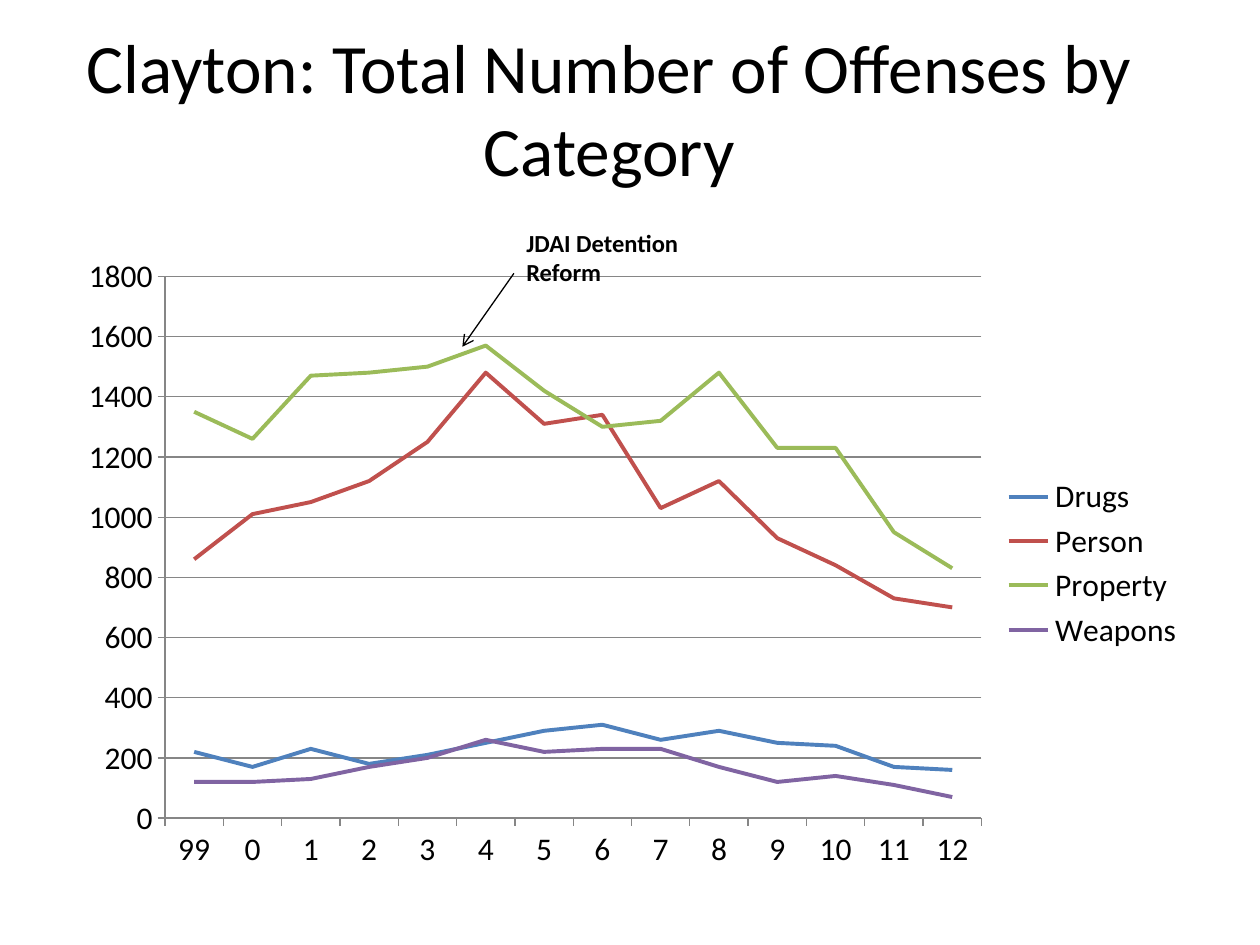
from lxml import etree
from pptx import Presentation
from pptx.chart.data import CategoryChartData
from pptx.dml.color import RGBColor
from pptx.enum.chart import XL_CHART_TYPE, XL_LEGEND_POSITION, XL_TICK_MARK
from pptx.enum.shapes import MSO_CONNECTOR
from pptx.enum.text import MSO_ANCHOR, PP_ALIGN
from pptx.oxml import parse_xml
from pptx.oxml.ns import nsdecls, qn
from pptx.util import Cm, Pt

LINE_CHART = XL_CHART_TYPE.LINE
LEGEND_RIGHT = XL_LEGEND_POSITION.RIGHT
TICK_OUT, TICK_NONE = XL_TICK_MARK.OUTSIDE, XL_TICK_MARK.NONE
STRAIGHT = MSO_CONNECTOR.STRAIGHT
MIDDLE, CENTER = MSO_ANCHOR.MIDDLE, PP_ALIGN.CENTER

# Content
TITLE = "Clayton: Total Number of Offenses by Category"
NOTE = "JDAI Detention Reform"
YEARS = ["99", *map(str, range(13))]
OFFENSES = {
    "Drugs": [220, 170, 230, 180, 210, 250, 290, 310, 260, 290, 250, 240, 170, 160],
    "Person": [860, 1010, 1050, 1120, 1250, 1480, 1310, 1340, 1030, 1120, 930, 840, 730, 700],
    "Property": [1350, 1260, 1470, 1480, 1500, 1570, 1420, 1300, 1320, 1480, 1230, 1230, 950, 830],
    "Weapons": [120, 120, 130, 170, 200, 260, 220, 230, 230, 170, 120, 140, 110, 70],
}
COLORS = {
    "text": "000000",
    "axis": "868686",
    "Drugs": "4F81BD",
    "Person": "C0504D",
    "Property": "9BBB59",
    "Weapons": "8064A2",
}

# Places in centimetres: left, top, width, height (arrow: from, to)
TITLE_AT = (0.43, 0.43, 23.7, 3.48)
CHART_AT = (1.27, 4.93, 22.86, 12.85)
NOTE_AT = (10.36, 4.47, 3.61, 2.06)
ARROW_AT = (10.36, 5.51, 9.32, 6.99)
PLOT_SHARE = {"x": 0.09, "y": 0.05, "w": 0.72, "h": 0.85}


def color(name):
    return RGBColor.from_string(COLORS[name])


def set_font(font, **formats):
    for name, value in {"name": "Calibri", **formats}.items():
        setattr(font, name, value)
    font.color.rgb = color("text")


def set_line(line, name, width):
    line.color.rgb = color(name)
    line.width = Pt(width)


def add_title(page):
    box = page.shapes.title
    box.left, box.top, box.width, box.height = map(Cm, TITLE_AT)
    box.text_frame.text = TITLE
    box.text_frame.vertical_anchor = MIDDLE
    para = box.text_frame.paragraphs[0]
    para.alignment = CENTER
    set_font(para.runs[0].font, size=Pt(39.6))


def add_offense_chart(page):
    data = CategoryChartData()
    data.categories = YEARS
    for name, values in OFFENSES.items():
        data.add_series(name, values)
    chart = page.shapes.add_chart(LINE_CHART, *map(Cm, CHART_AT), data).chart
    chart.has_title = False
    set_font(chart.font, size=Pt(18))
    chart.has_legend = True
    chart.legend.position = LEGEND_RIGHT
    chart.legend.include_in_layout = False

    # Axes
    for axis in (chart.category_axis, chart.value_axis):
        axis.major_tick_mark, axis.minor_tick_mark = TICK_OUT, TICK_NONE
        set_line(axis.format.line, "axis", 0.75)
    scale = chart.value_axis
    scale.minimum_scale, scale.maximum_scale, scale.major_unit = 0, 1800, 200
    scale.has_major_gridlines = True
    set_line(scale.major_gridlines.format.line, "axis", 0.75)

    # Series
    chart.plots[0].vary_by_categories = False
    for series in chart.plots[0].series:
        series.smooth = False
        set_line(series.format.line, series.name, 2.25)

    # Plot area position
    plot_area = chart.element.find(".//" + qn("c:plotArea"))
    for old in plot_area.findall(qn("c:layout")):
        plot_area.remove(old)
    shares = "".join(f'<c:{key} val="{share}"/>' for key, share in PLOT_SHARE.items())
    plot_area.insert(0, parse_xml(
        f'<c:layout {nsdecls("c")}><c:manualLayout><c:layoutTarget val="inner"/>'
        '<c:xMode val="edge"/><c:yMode val="edge"/>'
        f'{shares}</c:manualLayout></c:layout>'))


def add_note(page):
    box = page.shapes.add_textbox(*map(Cm, NOTE_AT))
    box.text_frame.word_wrap = True
    span = box.text_frame.paragraphs[0].add_run()
    span.text = NOTE
    set_font(span.font, size=Pt(14), bold=True)

    arrow = page.shapes.add_connector(STRAIGHT, *map(Cm, ARROW_AT))
    set_line(arrow.line, "text", 0.75)
    line = arrow.line._get_or_add_ln()
    etree.SubElement(line, qn("a:tailEnd"), type="arrow")
    etree.SubElement(arrow.element.spPr, qn("a:effectLst"))


def main():
    deck = Presentation()
    deck.slide_width, deck.slide_height = Cm(25.4), Cm(19.05)
    page = deck.slides.add_slide(deck.slide_layouts.get_by_name("Title Only"))
    add_title(page)
    add_offense_chart(page)
    add_note(page)
    deck.save("out.pptx")


if __name__ == "__main__":
    main()
